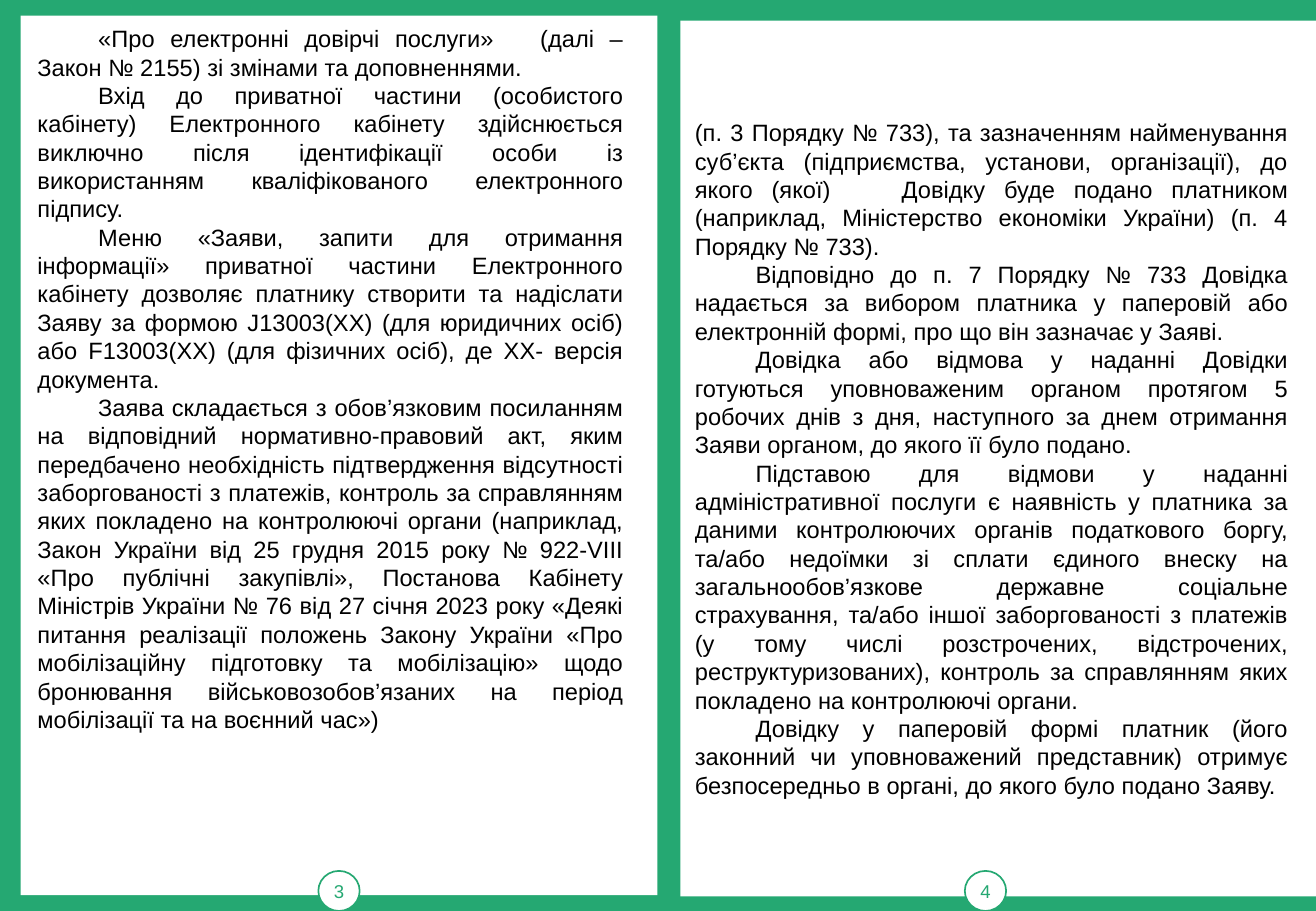
import lxml.etree
import pptx
import pptx.dml.color
import pptx.enum.shapes
import pptx.enum.text
import pptx.oxml.ns
import pptx.util

Inches = pptx.util.Inches
ALIGN = pptx.enum.text.PP_ALIGN
ANCHOR = pptx.enum.text.MSO_ANCHOR
SHAPE = pptx.enum.shapes.MSO_SHAPE

COLORS = {"green": "25A872", "paper": "FFFFFF", "ink": "000000"}
FIRST_LINE = 0.5

LEFT_PAGE = [
    "«Про електронні довірчі послуги»   (далі – Закон № 2155) зі змінами та доповненнями.",
    "Вхід до приватної частини (особистого кабінету) Електронного кабінету здійснюється "
    "виключно після ідентифікації особи із використанням кваліфікованого електронного підпису.",
    "Меню «Заяви, запити для отримання інформації» приватної частини Електронного кабінету "
    "дозволяє платнику створити та надіслати Заяву за формою J13003(ХХ) (для юридичних осіб) "
    "або F13003(ХХ) (для фізичних осіб), де ХХ- версія документа.",
    "Заява складається з обов’язковим посиланням на відповідний нормативно-правовий акт, яким "
    "передбачено необхідність підтвердження відсутності заборгованості з платежів, контроль за "
    "справлянням яких покладено на контролюючі органи (наприклад, Закон України від 25 грудня "
    "2015 року № 922-VIII «Про публічні закупівлі», Постанова Кабінету Міністрів України № 76 "
    "від 27 січня 2023 року «Деякі питання реалізації положень Закону України «Про "
    "мобілізаційну підготовку та мобілізацію» щодо бронювання військовозобов’язаних на період "
    "мобілізації та на воєнний час»)",
]
RIGHT_PAGE = [
    "(п. 3 Порядку № 733), та зазначенням найменування суб’єкта (підприємства, установи, "
    "організації), до якого (якої) \tДовідку буде подано платником (наприклад, Міністерство "
    "економіки України) (п. 4 Порядку № 733).",
    "Відповідно до п. 7 Порядку № 733 Довідка надається за вибором платника у паперовій або "
    "електронній формі, про що він зазначає у Заяві.",
    "Довідка або відмова у наданні Довідки готуються уповноваженим органом протягом 5 робочих "
    "днів з дня, наступного за днем отримання Заяви органом, до якого її було подано.",
    "Підставою для відмови у наданні адміністративної послуги є наявність у платника за даними "
    "контролюючих органів податкового боргу, та/або недоїмки зі сплати єдиного внеску на "
    "загальнообов’язкове державне соціальне страхування, та/або іншої заборгованості з платежів "
    "(у тому числі розстрочених, відстрочених, реструктуризованих), контроль за справлянням "
    "яких покладено на контролюючі органи.",
    "Довідку у паперовій формі платник (його законний чи уповноважений представник) отримує "
    "безпосередньо в органі, до якого було подано Заяву.",
]


def rgb(name):
    return pptx.dml.color.RGBColor.from_string(COLORS[name])


def add_tab_stops(paragraph):
    properties = paragraph._p.get_or_add_pPr()
    stops = lxml.etree.SubElement(properties, pptx.oxml.ns.qn("a:tabLst"))
    for step in range(1, 10):
        lxml.etree.SubElement(stops, pptx.oxml.ns.qn("a:tab"),
                              pos=str(Inches(step * FIRST_LINE)), algn="l")


def write(paragraph, text, size=14, color="ink", align=ALIGN.JUSTIFY, indent=0):
    properties = paragraph._p.get_or_add_pPr()
    properties.set("marL", "0")
    properties.set("indent", str(Inches(indent)))
    if "\t" in text:
        add_tab_stops(paragraph)
    paragraph.alignment = align
    run = paragraph.add_run()
    run.text = text
    run.font.name = "Arial"
    run.font.size = pptx.util.Pt(size)
    run.font.color.rgb = rgb(color)


def add_white_shape(slide, kind, box, outlined=False):
    shape = slide.shapes.add_shape(kind, *map(Inches, box))
    shape.shadow.inherit = False
    shape.fill.solid()
    shape.fill.fore_color.rgb = rgb("paper")
    if outlined:
        shape.line.color.rgb = rgb("green")
        shape.line.width = pptx.util.Pt(1)
    else:
        shape.line.fill.background()
    return shape


def add_page_number(slide, left, number):
    badge = add_white_shape(slide, SHAPE.OVAL, (left, 7.17, 0.34, 0.33), outlined=True)
    frame = badge.text_frame
    frame.margin_left = frame.margin_right = 0
    frame.vertical_anchor = ANCHOR.MIDDLE
    write(frame.paragraphs[0], str(number), size=11, color="green", align=ALIGN.CENTER)


def add_page_text(slide, box, paragraphs, anchor, continued=False):
    """Set body text; a continued page starts mid-paragraph, without an indent."""
    frame = slide.shapes.add_textbox(*map(Inches, box)).text_frame
    frame.word_wrap = True
    frame.vertical_anchor = anchor
    for index, text in enumerate(paragraphs):
        paragraph = frame.add_paragraph() if index else frame.paragraphs[0]
        write(paragraph, text, indent=0 if continued and index == 0 else FIRST_LINE)


def main():
    deck = pptx.Presentation()
    deck.slide_width, deck.slide_height = Inches(10.83), Inches(7.5)
    slide = deck.slides.add_slide(deck.slide_layouts[6])
    slide.background.fill.solid()
    slide.background.fill.fore_color.rgb = rgb("green")

    add_white_shape(slide, SHAPE.RECTANGLE, (0.17, 0.13, 5.24, 7.24))
    add_page_number(slide, 2.62, 3)
    add_white_shape(slide, SHAPE.RECTANGLE, (5.6, 0.17, 5.23, 7.21))
    add_page_number(slide, 7.94, 4)

    add_page_text(slide, (5.62, 0.14, 5.08, 7.27), RIGHT_PAGE, ANCHOR.MIDDLE, continued=True)
    add_page_text(slide, (0.21, 0.15, 5.02, 7.2), LEFT_PAGE, ANCHOR.TOP)
    deck.save("out.pptx")


if __name__ == "__main__":
    main()
